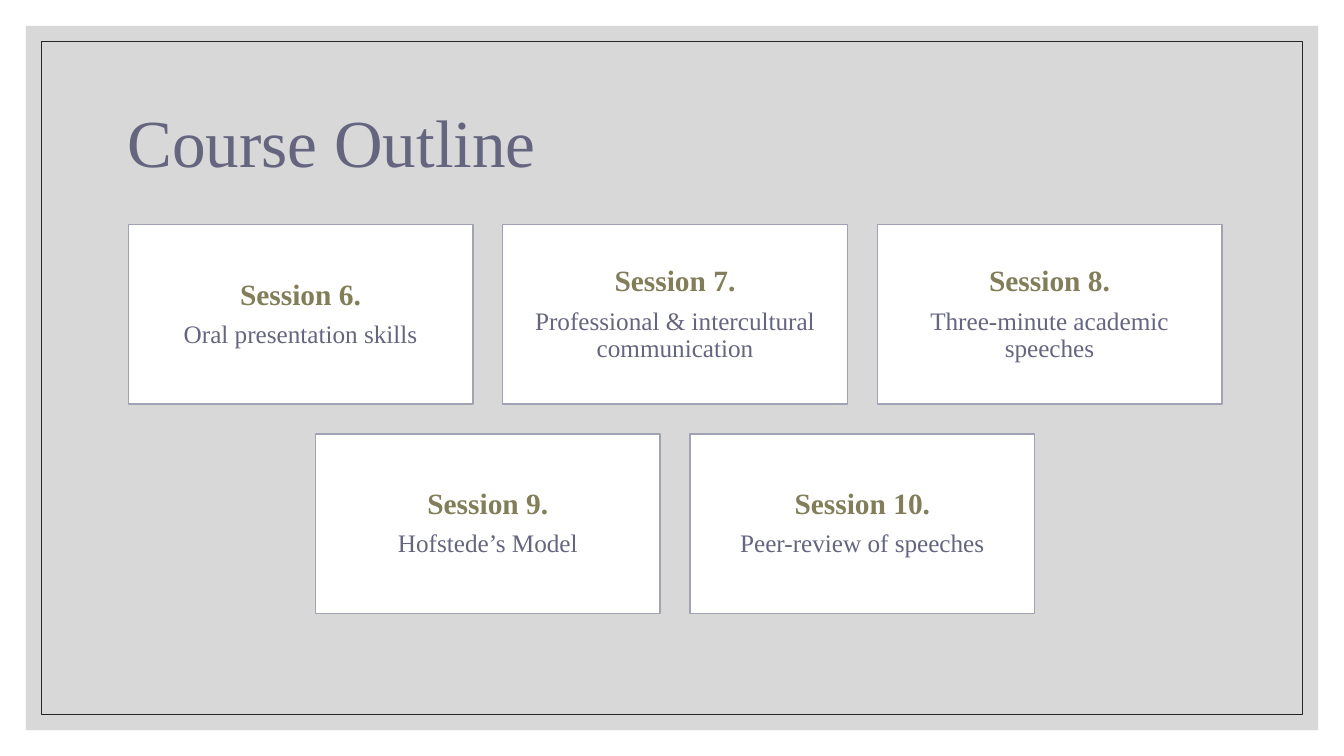
"""Build the course outline slide with five session cards."""
from lxml.etree import SubElement
from pptx import Presentation
from pptx.dml.color import RGBColor
from pptx.enum.shapes import MSO_SHAPE
from pptx.enum.text import MSO_ANCHOR, PP_ALIGN
from pptx.oxml.ns import qn
from pptx.util import Pt

TITLE = "Course Outline"
SESSION_ROWS = [
    [
        ("Session 6.", "Oral presentation skills"),
        ("Session 7.", "Professional & intercultural communication"),
        ("Session 8.", "Three-minute academic speeches"),
    ],
    [
        ("Session 9.", "Hofstede’s Model"),
        ("Session 10.", "Peer-review of speeches"),
    ],
]
COLOURS = {
    "panel": "BFBFBF",
    "frame": "262626",
    "card": "FFFFFF",
    "card_line": "A2A2B5",
    "heading": "817E59",
    "text": "656580",
}
FONT = "Times New Roman"
SLIDE_WIDTH, SLIDE_HEIGHT = 960, 540
PANEL_MARGIN, FRAME_MARGIN = 18.5, 29.5
CARD_WIDTH, CARD_HEIGHT, GAP = 246.2, 128.2, 21.3
CARDS_CENTRE, CARDS_TOP = 482.2, 160.5


def colour(name):
    return RGBColor.from_string(COLOURS[name])


def add_rectangle(slide, left, top, width, height, fill=None, line=None, line_width=1):
    shape = slide.shapes.add_shape(
        MSO_SHAPE.RECTANGLE, Pt(left), Pt(top), Pt(width), Pt(height)
    )
    shape.shadow.inherit = False
    if fill:
        shape.fill.solid()
        shape.fill.fore_color.rgb = colour(fill)
    else:
        shape.fill.background()
    if line:
        shape.line.color.rgb = colour(line)
        shape.line.width = Pt(line_width)
    else:
        shape.line.fill.background()
    return shape


def add_inset_rectangle(slide, margin, **style):
    return add_rectangle(
        slide, margin, margin, SLIDE_WIDTH - 2 * margin, SLIDE_HEIGHT - 2 * margin, **style
    )


def format_paragraph(paragraph, size, colour_name, bold=False):
    paragraph.line_spacing = 0.9
    paragraph.font.name = FONT
    paragraph.font.size = Pt(size)
    paragraph.font.bold = bold
    paragraph.font.color.rgb = colour(colour_name)


def add_card(slide, left, top, session, topic):
    card = add_rectangle(
        slide, left, top, CARD_WIDTH, CARD_HEIGHT, fill="card", line="card_line"
    )
    frame = card.text_frame
    frame.word_wrap = True
    frame.vertical_anchor = MSO_ANCHOR.MIDDLE
    frame.margin_left = frame.margin_right = Pt(6)
    frame.margin_top = frame.margin_bottom = Pt(6.5)
    frame.text = f"{session}\n{topic}"
    heading, description = frame.paragraphs
    format_paragraph(heading, 21, "heading", bold=True)
    format_paragraph(description, 18, "text")
    heading.space_after = Pt(7.35)
    for paragraph in frame.paragraphs:
        paragraph.alignment = PP_ALIGN.CENTER


def main():
    presentation = Presentation()
    presentation.slide_width = Pt(SLIDE_WIDTH)
    presentation.slide_height = Pt(SLIDE_HEIGHT)
    slide = presentation.slides.add_slide(presentation.slide_layouts[6])

    panel = add_inset_rectangle(slide, PANEL_MARGIN, fill="panel")
    panel_colour = panel.fill._xPr.find(qn("a:solidFill"))[0]
    SubElement(panel_colour, qn("a:alpha"), val="60000")
    add_inset_rectangle(slide, FRAME_MARGIN, line="frame", line_width=0.5)

    title = slide.shapes.add_textbox(Pt(84), Pt(50.4), Pt(792), Pt(108))
    title.text_frame.word_wrap = True
    title.text_frame.vertical_anchor = MSO_ANCHOR.MIDDLE
    title.text_frame.text = TITLE
    format_paragraph(title.text_frame.paragraphs[0], 48, "text")

    for row, sessions in enumerate(SESSION_ROWS):
        row_width = len(sessions) * (CARD_WIDTH + GAP) - GAP
        row_left = CARDS_CENTRE - row_width / 2
        top = CARDS_TOP + row * (CARD_HEIGHT + GAP)
        for column, (session, topic) in enumerate(sessions):
            add_card(slide, row_left + column * (CARD_WIDTH + GAP), top, session, topic)

    presentation.save("out.pptx")


if __name__ == "__main__":
    main()
